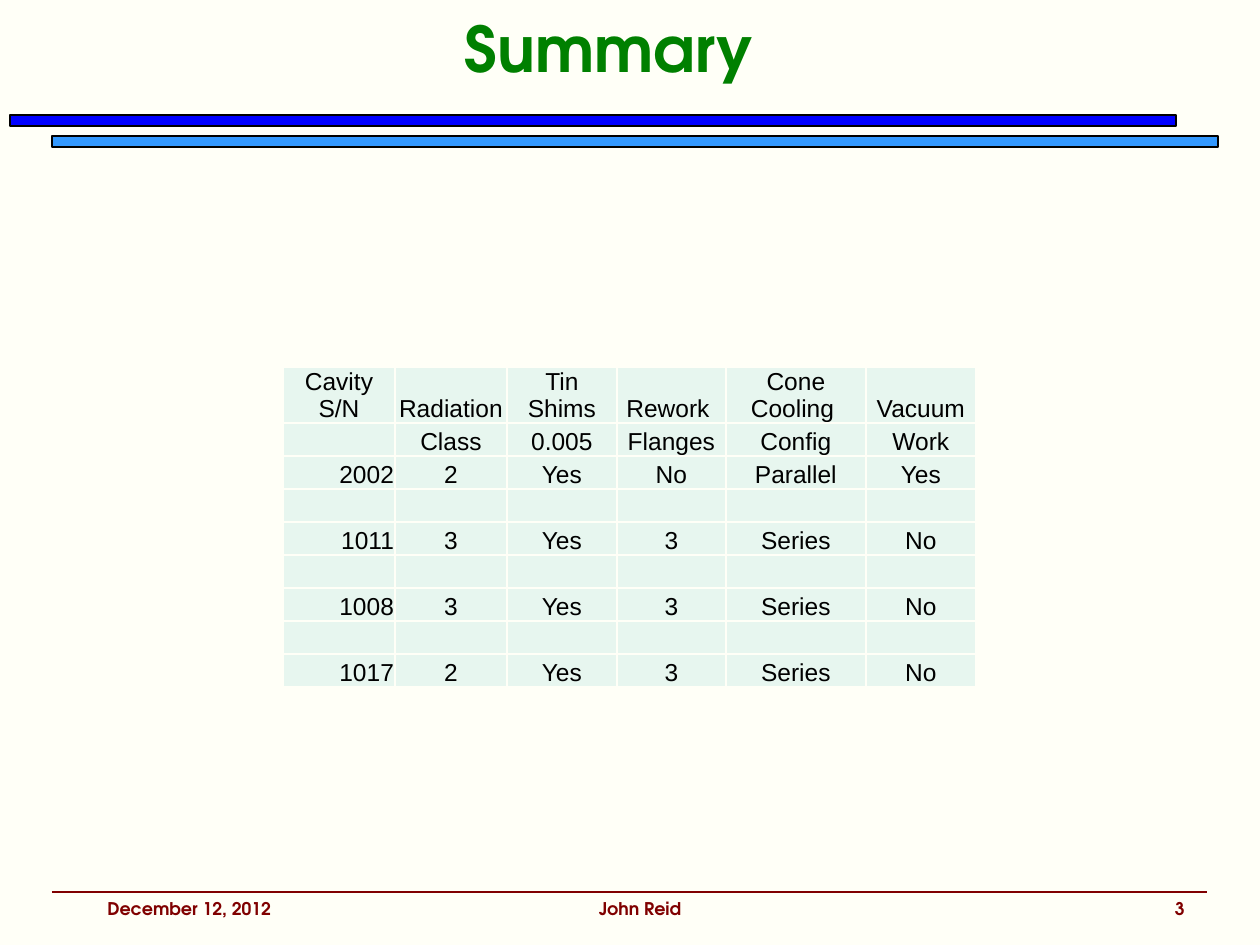
from typing import NamedTuple

from lxml.etree import SubElement
from pptx import Presentation
from pptx.dml.color import RGBColor
from pptx.enum.shapes import MSO_CONNECTOR, MSO_SHAPE
from pptx.enum.text import MSO_ANCHOR, PP_ALIGN
from pptx.oxml.ns import qn
from pptx.util import Emu, Pt

IVORY = RGBColor(0xFF, 0xFF, 0xF7)
MINT = RGBColor(0xE7, 0xF6, 0xEF)
BLACK = RGBColor(0x00, 0x00, 0x00)
BLUE = RGBColor(0x00, 0x00, 0xFF)
SKY = RGBColor(0x33, 0x99, 0xFF)
GREEN = RGBColor(0x00, 0x80, 0x00)
MAROON = RGBColor(0x80, 0x00, 0x00)

SANS = "Arial"
DISPLAY = "TeX Gyre Adventor"
EMU_PER_PX = 914400 / 126


class Box(NamedTuple):
    left: int
    top: int
    width: int
    height: int


class TextStyle(NamedTuple):
    size: int
    font: str
    color: RGBColor
    bold: bool = False


class Bar(NamedTuple):
    box: Box
    color: RGBColor


class Footer(NamedTuple):
    left: int
    width: int
    text: str
    align: PP_ALIGN


TITLE_STYLE = TextStyle(36, DISPLAY, GREEN, True)
FOOTER_STYLE = TextStyle(10, DISPLAY, MAROON, True)
CELL_STYLE = TextStyle(14, SANS, BLACK)

TITLE_BOX = Box(126, 0, 966, 95)
BARS = [Bar(Box(10, 115, 1166, 11), BLUE), Bar(Box(52, 136, 1166, 11), SKY)]
FOOTER_TOP, FOOTER_HEIGHT = 892, 42
FOOTERS = [
    Footer(95, 262, "December 12, 2012", PP_ALIGN.LEFT),
    Footer(388, 504, "John Reid", PP_ALIGN.CENTER),
    Footer(935, 262, "3", PP_ALIGN.RIGHT),
]

COLUMN_WIDTHS = [112, 112, 110, 109, 140, 110]
HEADER_HEIGHT, ROW_HEIGHT = 55, 33
BLANK_ROW = [""] * len(COLUMN_WIDTHS)
CAVITY_ROWS = [
    ["Cavity S/N", "Radiation", "Tin Shims", "Rework ", "Cone Cooling ", "Vacuum"],
    ["", "Class", "0.005", "Flanges", "Config", "Work"],
    ["2002", "2", "Yes", "No", "Parallel", "Yes"],
    BLANK_ROW,
    ["1011", "3", "Yes", "3", "Series", "No"],
    BLANK_ROW,
    ["1008", "3", "Yes", "3", "Series", "No"],
    BLANK_ROW,
    ["1017", "2", "Yes", "3", "Series", "No"],
]


def px(length: int) -> Emu:
    return Emu(round(length * EMU_PER_PX))


def place(box: Box) -> list[Emu]:
    return [px(length) for length in box]


def write(paragraph, text: str, style: TextStyle, align: PP_ALIGN) -> None:
    paragraph.text = text
    paragraph.alignment = align
    font = paragraph.font
    font.name, font.size, font.bold = style.font, Pt(style.size), style.bold
    font.color.rgb = style.color


def add_bar(slide, bar: Bar) -> None:
    shape = slide.shapes.add_shape(MSO_SHAPE.RECTANGLE, *place(bar.box))
    shape.shadow.inherit = False
    shape.fill.solid()
    shape.fill.fore_color.rgb = bar.color
    shape.line.color.rgb = BLACK
    shape.line.width = Pt(0.75)


def add_footer(slide, footer: Footer) -> None:
    box = Box(footer.left, FOOTER_TOP, footer.width, FOOTER_HEIGHT)
    frame = slide.shapes.add_textbox(*place(box)).text_frame
    frame.word_wrap = True
    write(frame.paragraphs[0], footer.text, FOOTER_STYLE, footer.align)


def add_footer_rule(slide) -> None:
    rule = slide.shapes.add_connector(
        MSO_CONNECTOR.STRAIGHT, px(52), px(FOOTER_TOP), px(1207), px(FOOTER_TOP))
    rule.line.color.rgb = MAROON
    rule.line.width = Pt(1.5)
    SubElement(rule._element.spPr, qn("a:effectLst"))


def set_title(slide) -> None:
    title = slide.shapes.title
    title.left, title.top, title.width, title.height = place(TITLE_BOX)
    title.text_frame.vertical_anchor = MSO_ANCHOR.MIDDLE
    write(title.text_frame.paragraphs[0], "Summary", TITLE_STYLE, PP_ALIGN.CENTER)


def add_borders(cell) -> None:
    """Put the four side lines ahead of the cell's fill, as the schema orders them."""
    properties = cell._tc.get_or_add_tcPr()
    for index, side in enumerate(("a:lnL", "a:lnR", "a:lnT", "a:lnB")):
        border = SubElement(properties, qn(side), w=str(Pt(1)))
        fill = SubElement(border, qn("a:solidFill"))
        SubElement(fill, qn("a:srgbClr"), val=str(IVORY))
        properties.insert(index, border)


def fill_cell(cell, text: str, align: PP_ALIGN) -> None:
    cell.fill.solid()
    cell.fill.fore_color.rgb = MINT
    cell.margin_left = cell.margin_right = cell.margin_top = px(1)
    cell.margin_bottom = 0
    cell.vertical_anchor = MSO_ANCHOR.BOTTOM
    paragraph = cell.text_frame.paragraphs[0]
    write(paragraph, text, CELL_STYLE, align)
    if not text:
        SubElement(paragraph._p, qn("a:endParaRPr"), sz=str(CELL_STYLE.size * 100))
    add_borders(cell)


def add_cavity_table(slide) -> None:
    height = HEADER_HEIGHT + ROW_HEIGHT * (len(CAVITY_ROWS) - 1)
    box = Box(283, 367, sum(COLUMN_WIDTHS), height)
    table = slide.shapes.add_table(len(CAVITY_ROWS), len(COLUMN_WIDTHS), *place(box)).table
    table.first_row = table.horz_banding = False
    for column, width in zip(table.columns, COLUMN_WIDTHS):
        column.width = px(width)
    for r, texts in enumerate(CAVITY_ROWS):
        table.rows[r].height = px(ROW_HEIGHT if r else HEADER_HEIGHT)
        for c, text in enumerate(texts):
            is_serial = c == 0 and text.isdigit()
            fill_cell(table.cell(r, c), text, PP_ALIGN.RIGHT if is_serial else PP_ALIGN.CENTER)


def main() -> None:
    presentation = Presentation()
    presentation.slide_width, presentation.slide_height = px(1260), px(945)
    slide = presentation.slides.add_slide(presentation.slide_layouts[5])
    slide.background.fill.solid()
    slide.background.fill.fore_color.rgb = IVORY

    add_footer_rule(slide)
    for bar in BARS:
        add_bar(slide, bar)
    set_title(slide)
    add_cavity_table(slide)
    for footer in FOOTERS:
        add_footer(slide, footer)
    presentation.save("out.pptx")


if __name__ == "__main__":
    main()
